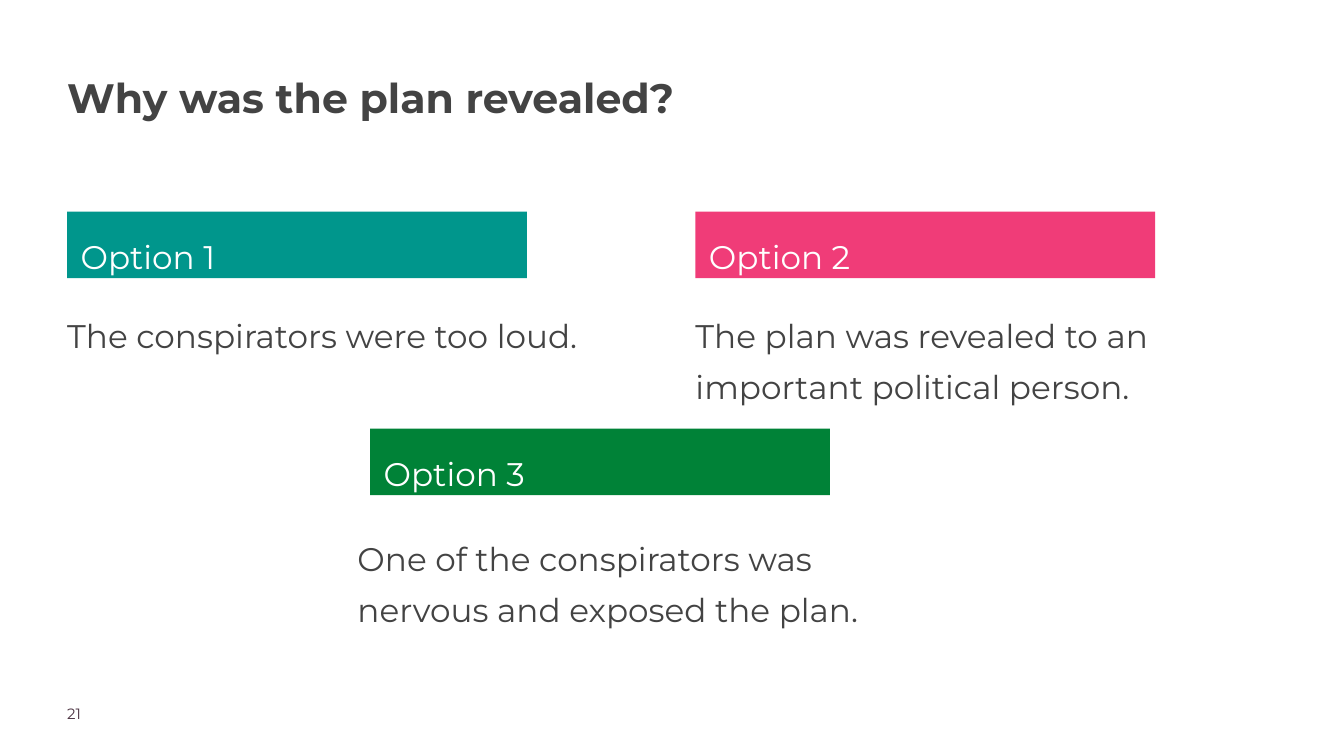
from typing import NamedTuple, Optional

from pptx import Presentation
from pptx.dml.color import RGBColor
from pptx.enum.shapes import MSO_SHAPE
from pptx.enum.text import MSO_ANCHOR, PP_ALIGN
from pptx.util import Pt

PX = 9144
FONT = "Montserrat"
WHITE = RGBColor(0xFF, 0xFF, 0xFF)
GREY = RGBColor(0x43, 0x43, 0x43)
PLUM = RGBColor(0x4B, 0x32, 0x41)
TEAL = RGBColor(0x00, 0x96, 0x8C)
PINK = RGBColor(0xF0, 0x3C, 0x78)
GREEN = RGBColor(0x00, 0x82, 0x37)


class Box(NamedTuple):
    left: int
    top: int
    width: int
    height: int


class Style(NamedTuple):
    size: int
    color: RGBColor
    bold: bool = False
    line: float = 1.0
    after: int = 0
    inset: int = 0


class Option(NamedTuple):
    label: str
    text: str
    fill: RGBColor
    bar: Box
    body: Box


TITLE = Style(44, GREY, bold=True, line=1.15)
LABEL = Style(35, WHITE, line=1.3, inset=20)
BODY = Style(35, GREY, line=1.3, after=20)
NUMBER = Style(16, PLUM)

OPTIONS = [
    Option("Option 1", "The conspirators were too loud.", TEAL,
           Box(100, 315, 684, 99), Box(100, 453, 864, 138)),
    Option("Option 2", "The plan was revealed to an important political person.", PINK,
           Box(1035, 315, 684, 99), Box(1035, 453, 864, 138)),
    Option("Option 3", "One of the conspirators was nervous and exposed the plan.", GREEN,
           Box(551, 638, 684, 99), Box(532, 784, 864, 138)),
]


def write(slide, box: Box, text: str, style: Style, fill: Optional[RGBColor] = None) -> None:
    place = [n * PX for n in box]
    if fill is None:
        shape = slide.shapes.add_textbox(*place)
    else:
        shape = slide.shapes.add_shape(MSO_SHAPE.RECTANGLE, *place)
        shape.shadow.inherit = False
        shape.fill.solid()
        shape.fill.fore_color.rgb = fill
        shape.line.fill.background()
    frame = shape.text_frame
    frame.word_wrap = True
    frame.vertical_anchor = MSO_ANCHOR.TOP
    frame.margin_left = frame.margin_right = style.inset * PX
    frame.margin_top = frame.margin_bottom = style.inset * PX
    para = frame.paragraphs[0]
    para.text = text
    para.alignment = PP_ALIGN.LEFT
    para.line_spacing = style.line
    para.space_after = Pt(style.after)
    para.font.name = FONT
    para.font.size = Pt(style.size)
    para.font.bold = style.bold
    para.font.color.rgb = style.color


def main() -> None:
    deck = Presentation()
    deck.slide_width = 2000 * PX
    deck.slide_height = 1125 * PX
    slide = deck.slides.add_slide(deck.slide_layouts[6])
    for option in OPTIONS:
        write(slide, option.bar, option.label, LABEL, option.fill)
        write(slide, option.body, option.text, BODY)
    write(slide, Box(100, 1048, 157, 39), "21", NUMBER)
    write(slide, Box(100, 97, 1444, 178), "Why was the plan revealed?", TITLE)
    deck.save("out.pptx")


if __name__ == "__main__":
    main()
